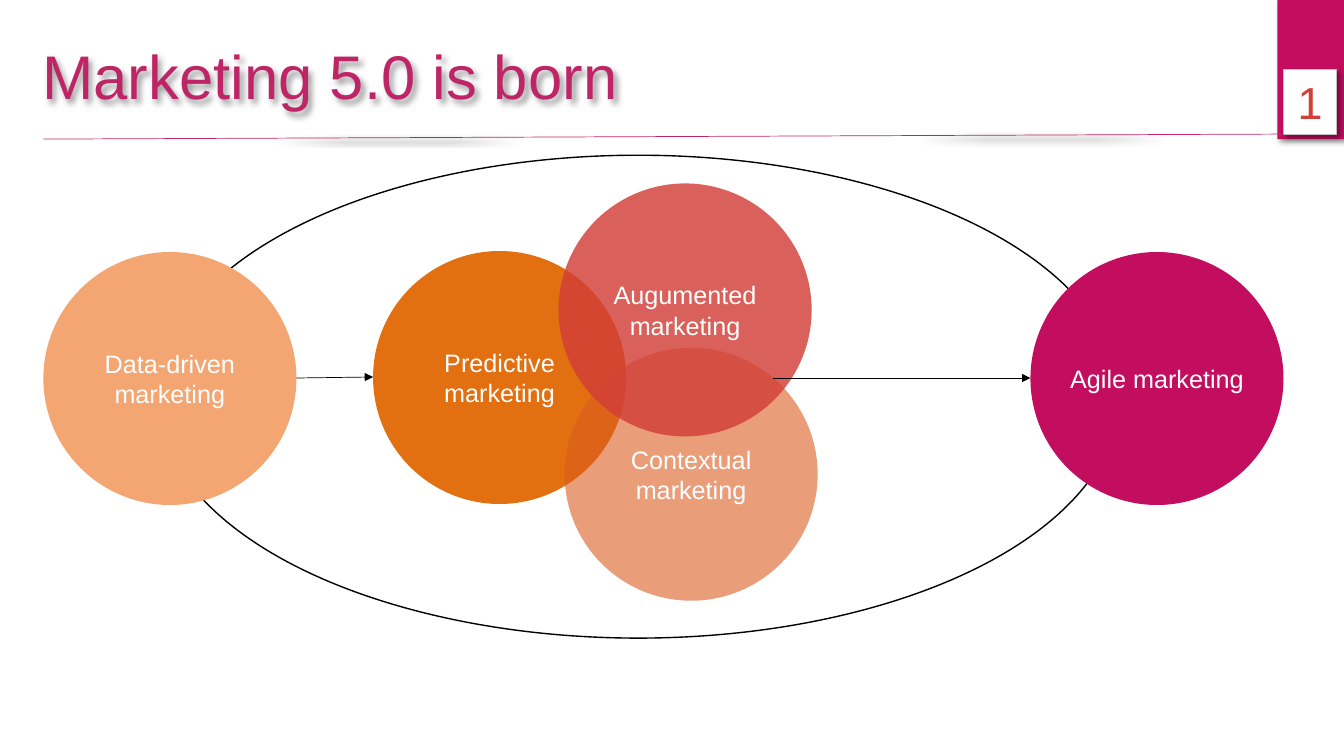
from lxml.etree import SubElement
from pptx import Presentation
from pptx.dml.color import RGBColor
from pptx.enum.shapes import MSO_CONNECTOR, MSO_SHAPE
from pptx.enum.text import MSO_ANCHOR, MSO_AUTO_SIZE, PP_ALIGN
from pptx.oxml.ns import qn
from pptx.util import Inches, Pt

BLACK, WHITE, GREY = "000000", "FFFFFF", "BFBFBF"
PINK, ROSE, RED = "C30E60", "BE2566", "D23E38"
SIZE = 2.51  # diameter of every circle
CIRCLES = [
    # left, top, text, fill, opacity in percent
    (0.43, 2.5, "Data-driven marketing", "F3A671", 100),
    (3.7, 2.49, "Predictive marketing", "E26F10", 100),
    (5.6, 3.45, "Contextual marketing", "DB5C1E", 60),
    (5.54, 1.82, "Augumented marketing", RED, 82),
    (10.22, 2.5, "Agile marketing", PINK, 100),
]


def color(code):
    return RGBColor.from_string(code)


def fade(parent, alpha):
    """Set the opacity, in percent, of a colour element."""
    SubElement(parent, qn("a:alpha"), val=str(alpha * 1000))


def effect(shape, shadow=False):
    """Give the shape an empty effect list, or one with a soft shadow."""
    effects = SubElement(shape._element.spPr, qn("a:effectLst"))
    if shadow:
        outer = SubElement(effects, qn("a:outerShdw"), blurRad=str(Pt(4)),
                           dist=str(Pt(3)), dir=str(45 * 60000),
                           algn="tl", rotWithShape="0")
        fade(SubElement(outer, qn("a:srgbClr"), val=BLACK), 40)


class Board:
    font = "Arial"

    def __init__(self, slide):
        self.slide = slide

    def label(self, shape, text, size, code, align=PP_ALIGN.CENTER):
        frame = shape.text_frame
        frame.text = text
        frame.word_wrap = True
        para = frame.paragraphs[0]
        para.alignment = align
        para.font.name = self.font
        para.font.size = Pt(size)
        para.font.color.rgb = color(code)
        return frame

    def title(self, text, left, top, width, height):
        title = self.slide.shapes.title
        title.left, title.top = Inches(left), Inches(top)
        title.width, title.height = Inches(width), Inches(height)
        frame = self.label(title, text, 44, ROSE, PP_ALIGN.LEFT)
        frame.vertical_anchor = MSO_ANCHOR.TOP
        frame.auto_size = MSO_AUTO_SIZE.NONE
        effect(title, True)

    def shape(self, kind, box, fill=None, line=None, width=1, shadow=False):
        shape = self.slide.shapes.add_shape(kind, *map(Inches, box))
        if fill:
            shape.fill.solid()
            shape.fill.fore_color.rgb = color(fill)
        else:
            shape.fill.background()
        if line:
            shape.line.color.rgb = color(line)
            shape.line.width = Pt(width)
        else:
            shape.line.fill.background()
        effect(shape, shadow)
        return shape

    def circle(self, left, top, text, fill, alpha):
        shape = self.shape(MSO_SHAPE.OVAL, (left, top, SIZE, SIZE), fill)
        if alpha < 100:
            fade(shape._element.spPr.find(".//" + qn("a:srgbClr")), alpha)
        frame = self.label(shape, text, 18, WHITE)
        frame.vertical_anchor = MSO_ANCHOR.MIDDLE
        frame.margin_left = frame.margin_right = 0
        frame.margin_top = frame.margin_bottom = 0

    def line(self, start, end, code, arrow=False, shadow=False):
        line = self.slide.shapes.add_connector(
            MSO_CONNECTOR.STRAIGHT, *map(Inches, start + end))
        line.line.color.rgb = color(code)
        line.line.width = Pt(0.5)
        if arrow:
            SubElement(line.line._get_or_add_ln(), qn("a:tailEnd"),
                       type="triangle")
        effect(line, shadow)


def main():
    deck = Presentation()
    deck.slide_width, deck.slide_height = Inches(13.33), Inches(7.5)
    board = Board(deck.slides.add_slide(deck.slide_layouts[5]))

    board.title("Marketing 5.0 is born", 0.32, 0.33, 12.27, 0.84)
    board.shape(MSO_SHAPE.OVAL, (1.56, 1.54, 9.54, 4.79), line=BLACK)
    board.shape(MSO_SHAPE.RECTANGLE, (12.67, 0, 0.67, 1.38), PINK, shadow=True)
    number = board.shape(MSO_SHAPE.RECTANGLE, (12.73, 0.69, 0.53, 0.64),
                         WHITE, GREY, 0.75, shadow=True)
    frame = board.label(number, "1", 32, RED)
    frame.vertical_anchor = MSO_ANCHOR.TOP
    board.line((0.43, 1.38), (12.73, 1.33), ROSE, shadow=True)

    for circle in CIRCLES:
        board.circle(*circle)
    board.line((2.94, 3.75), (3.7, 3.74), BLACK, arrow=True)
    board.line((7.67, 3.75), (10.22, 3.75), BLACK, arrow=True)
    deck.save("out.pptx")


if __name__ == "__main__":
    main()
